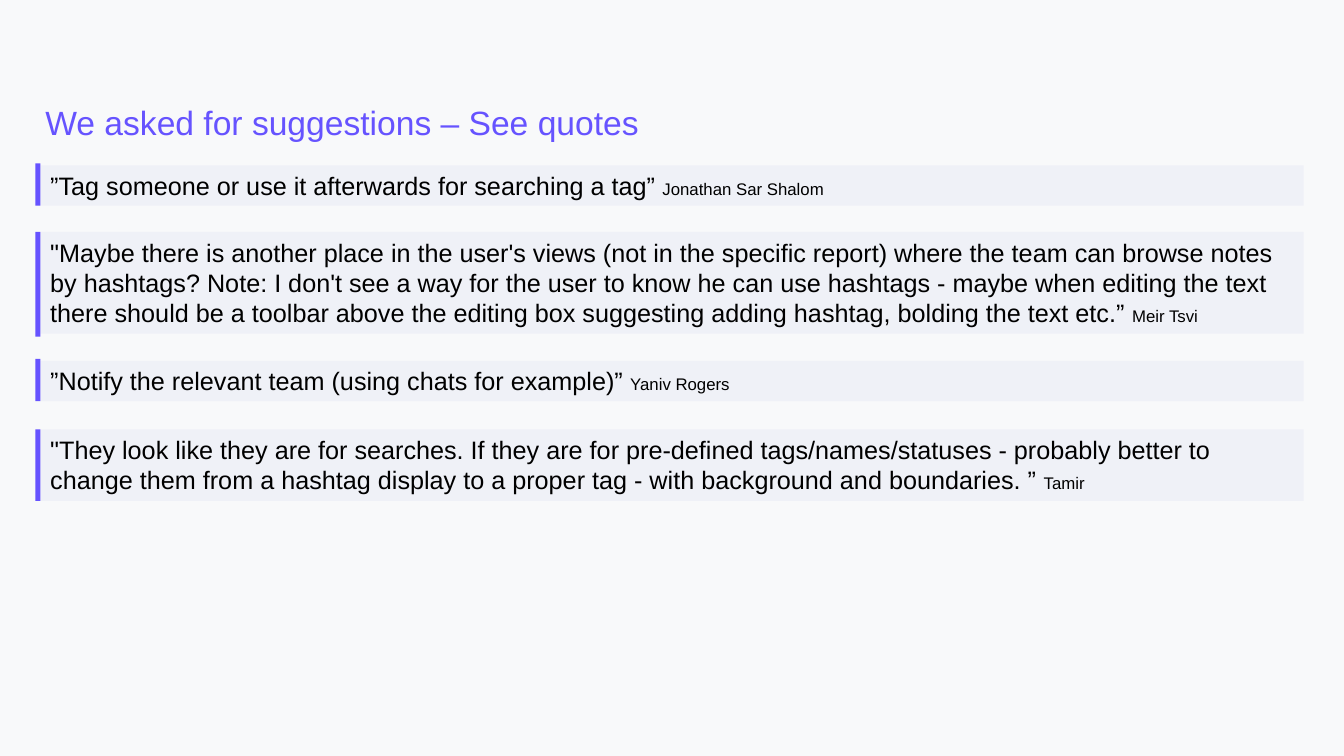
"""Build a slide of user quotes, each on a tinted panel with an accent bar."""
from lxml import etree
from pptx import Presentation
from pptx.dml.color import RGBColor
from pptx.enum.shapes import MSO_SHAPE
from pptx.enum.text import MSO_ANCHOR, MSO_AUTO_SIZE, PP_ALIGN
from pptx.oxml.ns import qn
from pptx.util import Inches, Pt

RECT = MSO_SHAPE.RECTANGLE
TOP = MSO_ANCHOR.TOP
LEFT = PP_ALIGN.LEFT
NO_FIT = MSO_AUTO_SIZE.NONE

TITLE = "We asked for suggestions – See quotes"
# quote, author, panel top, panel height, bar top, bar height
QUOTES = [
    ("”Tag someone or use it afterwards for searching a tag”",
     "Jonathan Sar Shalom", 1.64, 0.4, 1.62, 0.42),
    ("\"Maybe there is another place in the user's views (not in the specific "
     "report) where the team can browse notes by hashtags? Note: I don't see a "
     "way for the user to know he can use hashtags - maybe when editing the "
     "text there should be a toolbar above the editing box suggesting adding "
     "hashtag, bolding the text etc.”",
     "Meir Tsvi", 2.3, 1.01, 2.3, 1.04),
    ("”Notify the relevant team (using chats for example)”",
     "Yaniv Rogers", 3.58, 0.4, 3.56, 0.42),
    ("\"They look like they are for searches. If they are for pre-defined "
     "tags/names/statuses - probably better to change them from a hashtag "
     "display to a proper tag - with background and boundaries. ”",
     "Tamir", 4.26, 0.71, 4.26, 0.71),
]
ACCENT, PANEL, BACKGROUND, INK = "6653FF", "BEC6EA", "F8F9FA", "000000"
PANEL_LEFT, PANEL_WIDTH, BAR_WIDTH = 0.4, 12.53, 0.05


def rgb(value):
    return RGBColor.from_string(value)


def add_run(p, text, size=18, color=INK):
    r = p.add_run()
    r.text = text
    r.font.name = "Arial"
    r.font.size = Pt(size)
    r.font.color.rgb = rgb(color)


def add_rect(slide, x, y, w, h, color, alpha=100):
    sp = slide.shapes.add_shape(RECT, Inches(x), Inches(y), Inches(w), Inches(h))
    sp.shadow.inherit = False
    sp.line.fill.background()
    sp.fill.solid()
    sp.fill.fore_color.rgb = rgb(color)
    if alpha < 100:
        clr = sp.fill._xPr.find(qn("a:solidFill")).find(qn("a:srgbClr"))
        etree.SubElement(clr, qn("a:alpha"), val=str(alpha * 1000))
    return sp


def add_title(slide):
    sp = slide.shapes.title
    sp.left, sp.top = Inches(PANEL_LEFT), Inches(0.96)
    sp.width, sp.height = Inches(8.16), Inches(1.26)
    tf = sp.text_frame
    tf.auto_size = NO_FIT
    tf.vertical_anchor = TOP
    tf.margin_left = tf.margin_right = Inches(0.05)
    tf.margin_top = tf.margin_bottom = Inches(0.05)
    p = tf.paragraphs[0]
    p.alignment = LEFT
    add_run(p, TITLE, size=24, color=ACCENT)


def add_quote(slide, quote, author, top, height, bar_top, bar_height):
    sp = add_rect(slide, PANEL_LEFT, top, PANEL_WIDTH, height, PANEL, alpha=15)
    tf = sp.text_frame
    tf.word_wrap = True
    tf.vertical_anchor = TOP
    p = tf.paragraphs[0]
    p.alignment = LEFT
    add_run(p, quote + " ")
    add_run(p, author, size=12)
    add_rect(slide, PANEL_LEFT - BAR_WIDTH, bar_top, BAR_WIDTH, bar_height, ACCENT)


def main():
    prs = Presentation()
    prs.slide_width, prs.slide_height = Inches(13.33), Inches(7.5)
    slide = prs.slides.add_slide(prs.slide_layouts[5])
    slide.background.fill.solid()
    slide.background.fill.fore_color.rgb = rgb(BACKGROUND)
    add_title(slide)
    for quote in QUOTES:
        add_quote(slide, *quote)
    prs.save("out.pptx")


if __name__ == "__main__":
    main()
